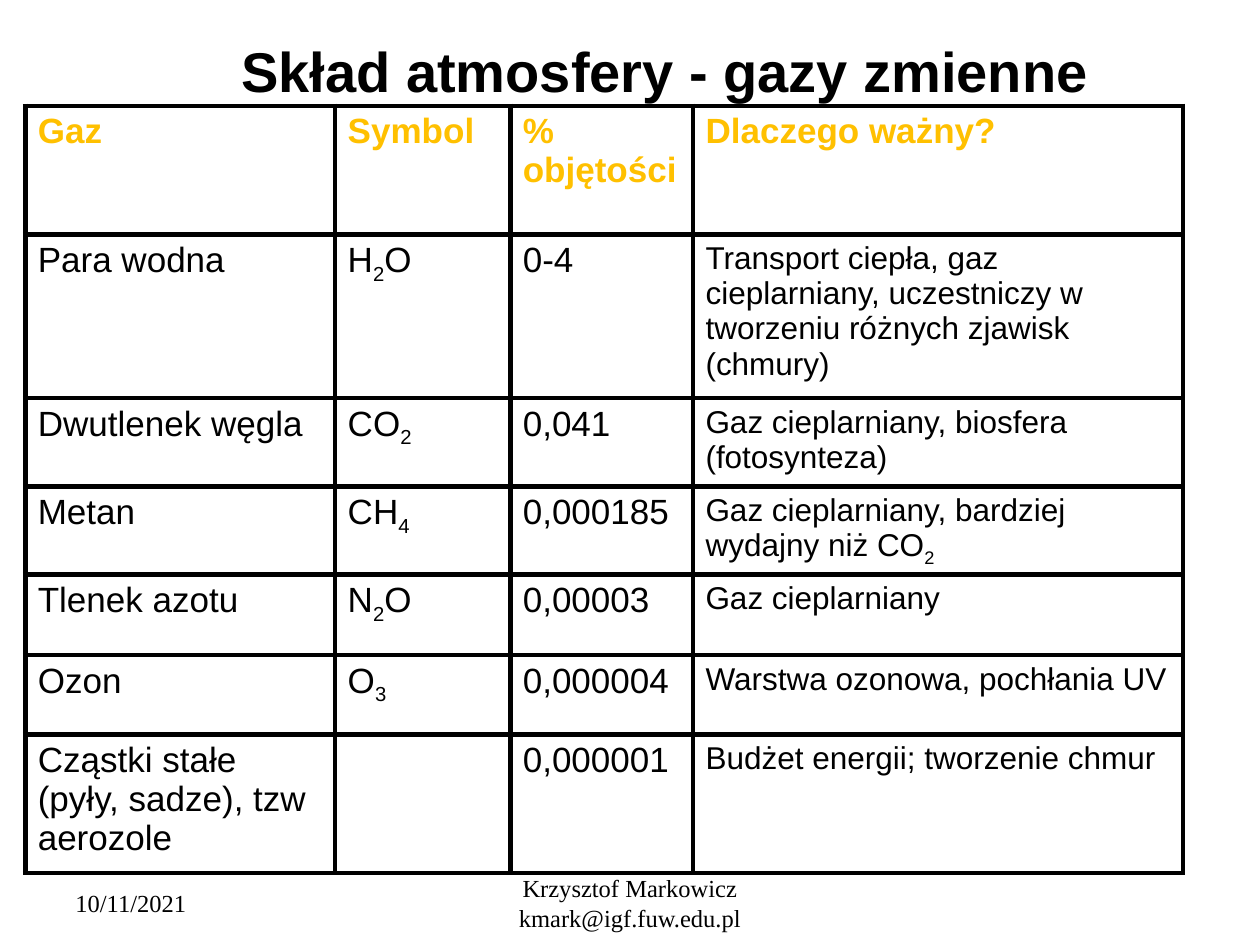
from dataclasses import dataclass

from lxml import etree
from pptx import Presentation
from pptx import util as u
from pptx.dml.color import RGBColor
from pptx.enum import text
from pptx.oxml import ns


@dataclass(frozen=True)
class Theme:
    ink: str = "000000"
    gold: str = "FFC000"
    sans: str = "Arial"
    serif: str = "Times New Roman"
    title: int = 32
    body: int = 20
    note: int = 18
    foot: int = 14
    rule: int = 3


T = Theme()
WIDE, HIGH = 10, 7.5
COLS = [2.46, 1.39, 1.45, 3.89]
ROWS = [1.02, 1.3, 0.7, 0.7, 0.64, 0.63, 1.1]
# An underscore lowers the character that follows it.
GASES = [
    ["Gaz", "Symbol", "% objętości", "Dlaczego ważny?"],
    ["Para wodna", "H_2O", "0-4",
     "Transport ciepła, gaz cieplarniany, uczestniczy w tworzeniu "
     "różnych zjawisk (chmury)"],
    ["Dwutlenek węgla", "CO_2", "0,041",
     "Gaz cieplarniany, biosfera (fotosynteza)"],
    ["Metan", "CH_4", "0,000185",
     "Gaz cieplarniany, bardziej wydajny niż CO_2"],
    ["Tlenek azotu", "N_2O", "0,00003", "Gaz cieplarniany"],
    ["Ozon", "O_3", "0,000004", "Warstwa ozonowa, pochłania UV"],
    ["Cząstki stałe (pyły, sadze), tzw aerozole", "", "0,000001",
     "Budżet energii; tworzenie chmur"],
]


def style(para, size, face, color=T.ink, bold=False):
    font = para.font
    font.size, font.name, font.bold = u.Pt(size), face, bold
    font.color.rgb = RGBColor.from_string(color)


def write(para, words):
    """Add runs, lowering each character marked by an underscore."""
    head, *rest = words.split("_")
    parts = [(head, False)]
    for part in rest:
        parts += [(part[0], True), (part[1:], False)]
    for part, low in parts:
        if part:
            run = para.add_run()
            run.text = part
            if low:
                run.font._element.set("baseline", "-25000")


def label(slide, words, box, size, face, bold=False, mid=True):
    """Add a text box; box holds shares of the slide's size."""
    x, y, w, h = box
    shape = slide.shapes.add_textbox(
        u.Inches(x * WIDE), u.Inches(y * HIGH),
        u.Inches(w * WIDE), u.Inches(h * HIGH))
    frame = shape.text_frame
    frame.word_wrap = True
    frame.vertical_anchor = text.MSO_ANCHOR.MIDDLE
    para = frame.paragraphs[0]
    para.alignment = text.PP_ALIGN.CENTER if mid else text.PP_ALIGN.LEFT
    style(para, size, face, bold=bold)
    write(para, words)


def edge(cell):
    """Rule all four sides of a cell."""
    props = cell._tc.get_or_add_tcPr()
    for side in ("lnL", "lnR", "lnT", "lnB"):
        line = etree.SubElement(props, ns.qn(f"a:{side}"), w=str(u.Pt(T.rule)))
        fill = etree.SubElement(line, ns.qn("a:solidFill"))
        etree.SubElement(fill, ns.qn("a:srgbClr"), val=T.ink)


def space(para, share):
    """Set the space before as a share of the line."""
    gap = etree.SubElement(para._p.get_or_add_pPr(), ns.qn("a:spcBef"))
    etree.SubElement(gap, ns.qn("a:spcPct"), val=str(share * 1000))


def fill(cell, words, row, col):
    cell.margin_left = cell.margin_right = u.Inches(0.1)
    cell.margin_top = u.Inches(0.05)
    cell.margin_bottom = 0  # keeps a lowered last line from stretching its row
    edge(cell)
    cell.fill.background()
    para = cell.text_frame.paragraphs[0]
    space(para, 20)
    top = row == 0
    size = T.note if col == 3 and not top else T.body
    style(para, size, T.sans, T.gold if top else T.ink, top)
    write(para, words)


def grid(slide, x, y):
    table = slide.shapes.add_table(
        len(ROWS), len(COLS), u.Inches(x * WIDE), u.Inches(y * HIGH),
        u.Inches(sum(COLS)), u.Inches(sum(ROWS))).table
    table.first_row = table.horz_banding = False
    for col, width in zip(table.columns, COLS):
        col.width = u.Inches(width)
    for row, height in zip(table.rows, ROWS):
        row.height = u.Inches(height)
    for r, line in enumerate(GASES):
        for c, words in enumerate(line):
            fill(table.cell(r, c), words, r, c)


def main():
    deck = Presentation()
    deck.slide_width, deck.slide_height = u.Inches(WIDE), u.Inches(HIGH)
    slide = deck.slides.add_slide(deck.slide_layouts[6])
    foot, deep = 0.93, 0.05
    label(slide, "10/11/2021", (0.05, foot, 0.23, deep),
          T.foot, T.serif, mid=False)
    label(slide, "Krzysztof Markowicz kmark@igf.fuw.edu.pl",
          (0.34, foot, 0.32, deep), T.foot, T.serif)
    label(slide, "Skład atmosfery - gazy zmienne",
          (0.075, 0.028, 0.906, 0.093), T.title, T.sans, bold=True)
    grid(slide, 0.02, 0.112)
    deck.save("out.pptx")


if __name__ == "__main__":
    main()
